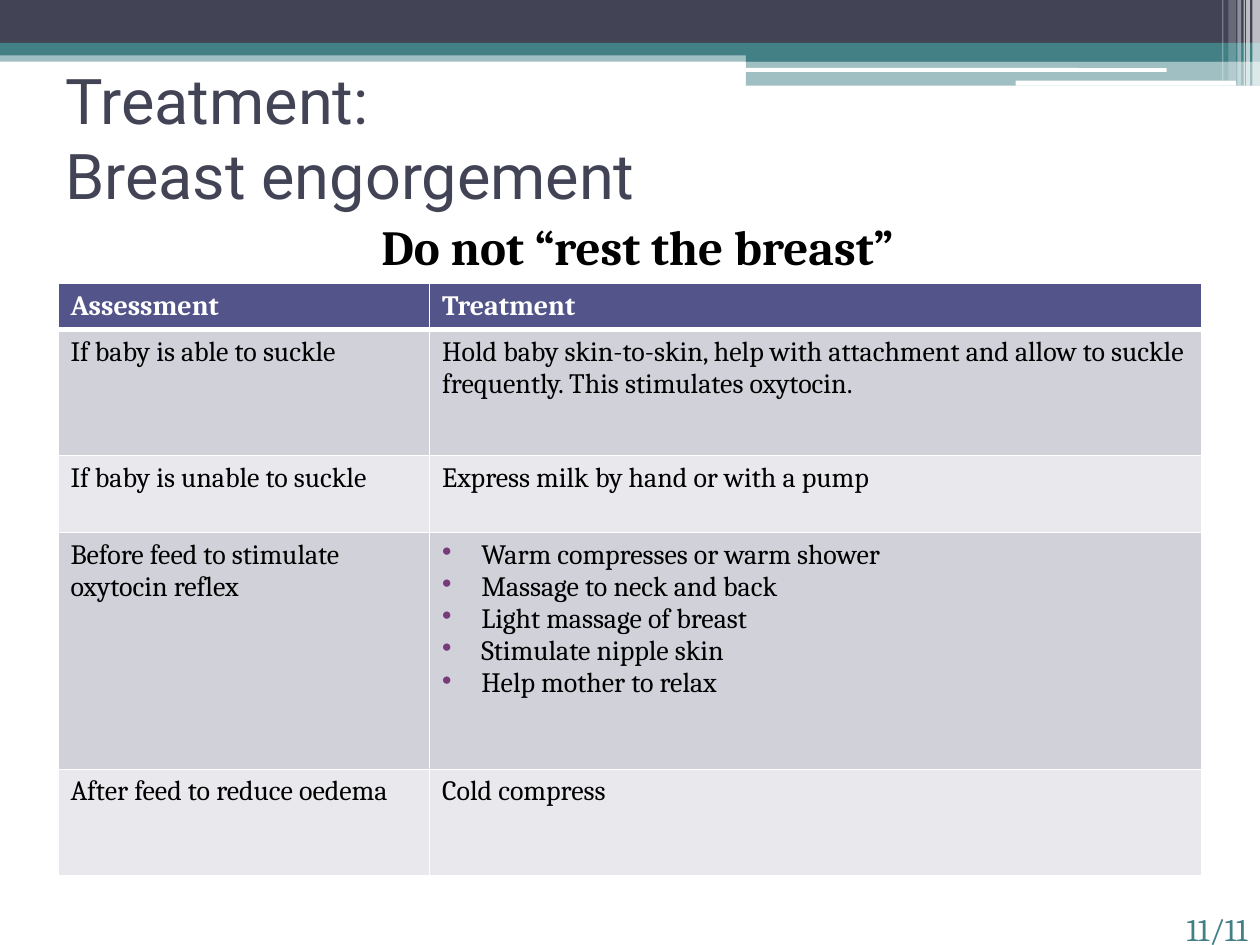
import pptx
import pptx.dml.color
import pptx.enum.shapes
import pptx.enum.text
import pptx.oxml
import pptx.oxml.ns
import pptx.util
from dataclasses import dataclass
from lxml import etree

Inches = pptx.util.Inches
Pt = pptx.util.Pt
ALIGN = pptx.enum.text.PP_ALIGN
ANCHOR = pptx.enum.text.MSO_ANCHOR
SHAPE = pptx.enum.shapes.MSO_SHAPE
qn = pptx.oxml.ns.qn


@dataclass(frozen=True)
class Theme:
    navy: str = "424456"
    teal: str = "438086"
    white: str = "FFFFFF"
    black: str = "000000"
    header: str = "53548A"
    bands: tuple = ("D1D1DA", "E9E9ED")
    bullet: str = "783A7A"
    heading_font: str = "Roboto"
    body_font: str = "Cambria"
    title_size: int = 36
    message_size: int = 28
    number_size: int = 18
    table_size: int = 16


def rgb(value):
    return pptx.dml.color.RGBColor.from_string(value)


def apply(obj, fmt):
    for name, value in fmt.items():
        setattr(obj, name, value)


class SlideBuilder:
    def __init__(self, slide, theme):
        self.slide = slide
        self.theme = theme

    def bar(self, box, color, alpha=100, kind=SHAPE.RECTANGLE):
        sp = self.slide.shapes.add_shape(kind, *map(Inches, box))
        sp.shadow.inherit = False
        sp.line.fill.background()
        sp.fill.solid()
        sp.fill.fore_color.rgb = rgb(color)
        if alpha < 100:
            clr = sp.fill._xPr.find(".//" + qn("a:srgbClr"))
            etree.SubElement(clr, qn("a:alpha"), val=str(alpha * 1000))

    def run(self, p, text, color, **fmt):
        r = p.add_run()
        r.text = text
        apply(r.font, {"name": self.theme.body_font, **fmt})
        r.font.color.rgb = rgb(color)

    def text(self, box, lines, color, align=ALIGN.LEFT, anchor=ANCHOR.TOP,
             space_before=0, margin_left=0.1, **fmt):
        tf = self.slide.shapes.add_textbox(*map(Inches, box)).text_frame
        apply(tf, {"word_wrap": True, "vertical_anchor": anchor,
                   "margin_left": Inches(margin_left)})
        for i, line in enumerate(lines):
            p = tf.add_paragraph() if i else tf.paragraphs[0]
            apply(p, {"alignment": align, "space_before": Pt(space_before)})
            self.run(p, line, color, **fmt)

    def bullet(self, p):
        pPr = p._p.get_or_add_pPr()
        pPr.set("marL", str(Inches(0.31)))
        pPr.set("indent", str(-Inches(0.31)))
        clr = etree.SubElement(pPr, qn("a:buClr"))
        etree.SubElement(clr, qn("a:srgbClr"), val=self.theme.bullet)
        etree.SubElement(pPr, qn("a:buChar"), char="•")

    def borders(self, cell, bottom):
        tcPr = cell._tc.get_or_add_tcPr()
        widths = {"lnL": 1, "lnR": 1, "lnT": 1, "lnB": bottom}
        for i, (tag, width) in enumerate(widths.items()):
            ln = etree.Element(qn("a:" + tag), w=str(Pt(width)))
            fill = etree.SubElement(ln, qn("a:solidFill"))
            etree.SubElement(fill, qn("a:srgbClr"), val=self.theme.white)
            tcPr.insert(i, ln)

    def cell(self, cell, content, row):
        t = self.theme
        head = row == 0
        cell.fill.solid()
        cell.fill.fore_color.rgb = rgb(t.header if head else t.bands[(row - 1) % 2])
        self.borders(cell, 3 if head or row == -1 else 1)
        bulleted = isinstance(content, list)
        tf = cell.text_frame
        for i, line in enumerate(content if bulleted else [content]):
            p = tf.add_paragraph() if i else tf.paragraphs[0]
            if bulleted:
                self.bullet(p)
            self.run(p, line, t.white if head else t.black,
                     size=Pt(t.table_size), bold=head)

    def table(self, left, top, widths, heights, rows):
        tbl = self.slide.shapes.add_table(
            len(heights), len(widths), Inches(left), Inches(top),
            Inches(sum(widths)), Inches(sum(heights))).table
        for col, width in zip(tbl.columns, widths):
            col.width = Inches(width)
        for i, (height, row) in enumerate(zip(heights, rows)):
            tbl.rows[i].height = Inches(height)
            for j, content in enumerate(row):
                self.cell(tbl.cell(i, j), content, i)


ROWS = [
    ("Assessment", "Treatment"),
    ("If baby is able to suckle",
     "Hold baby skin-to-skin, help with attachment and allow to suckle "
     "frequently. This stimulates oxytocin."),
    ("If baby is unable to suckle", "Express milk by hand or with a pump"),
    ("Before feed to stimulate oxytocin reflex",
     ["Warm compresses or warm shower", "Massage to neck and back",
      "Light massage of breast", "Stimulate nipple skin",
      "Help mother to relax"]),
    ("After feed to reduce oedema", "Cold compress"),
]


def main():
    prs = pptx.Presentation()
    prs.slide_width, prs.slide_height = Inches(10), Inches(7.5)
    t = Theme()
    s = SlideBuilder(prs.slides.add_slide(prs.slide_layouts[6]), t)

    s.bar((0, 0.4, 10, 0.09), t.teal, 50)
    s.bar((0, 0, 10, 0.34), t.navy)
    s.bar((0, 0.34, 10, 0.1), t.teal)
    s.bar((5.92, 0.39, 4.08, 0.1), t.teal)
    s.bar((5.92, 0.48, 4.08, 0.2), t.teal, 50)
    for box in ((5.91, 0.54, 3.35, 0.03), (8.06, 0.64, 1.75, 0.04)):
        s.bar(box, t.white, kind=SHAPE.ROUNDED_RECTANGLE)
    stripes = [(9.94, 0.06, 0.68, 65), (9.89, 0.03, 0.68, 65),
               (9.87, 0.01, 0.68, 60), (9.82, 0.03, 0.68, 40),
               (9.75, 0.06, 0.64, 20), (9.7, 0.01, 0.64, 30)]
    for left, width, height, alpha in stripes:
        s.bar((left, 0, width, height), t.white, alpha)

    s.text((0.42, 0.5, 9, 1.17), ["Treatment:", "Breast engorgement"], t.navy,
           anchor=ANCHOR.MIDDLE, name=t.heading_font, size=Pt(t.title_size))
    s.text((0.5, 1.67, 9, 5.52), ["Do not “rest the breast”"], t.black,
           align=ALIGN.CENTER, space_before=3, margin_left=0.22,
           size=Pt(t.message_size), bold=True)
    s.text((8.58, 7.17, 1.42, 0.33), ["11/11"], t.teal, align=ALIGN.RIGHT,
           size=Pt(t.number_size))
    s.table(0.46, 2.25, (2.95, 6.13), (0.34, 1, 0.61, 1.88, 0.84), ROWS)
    prs.save("out.pptx")


if __name__ == "__main__":
    main()
